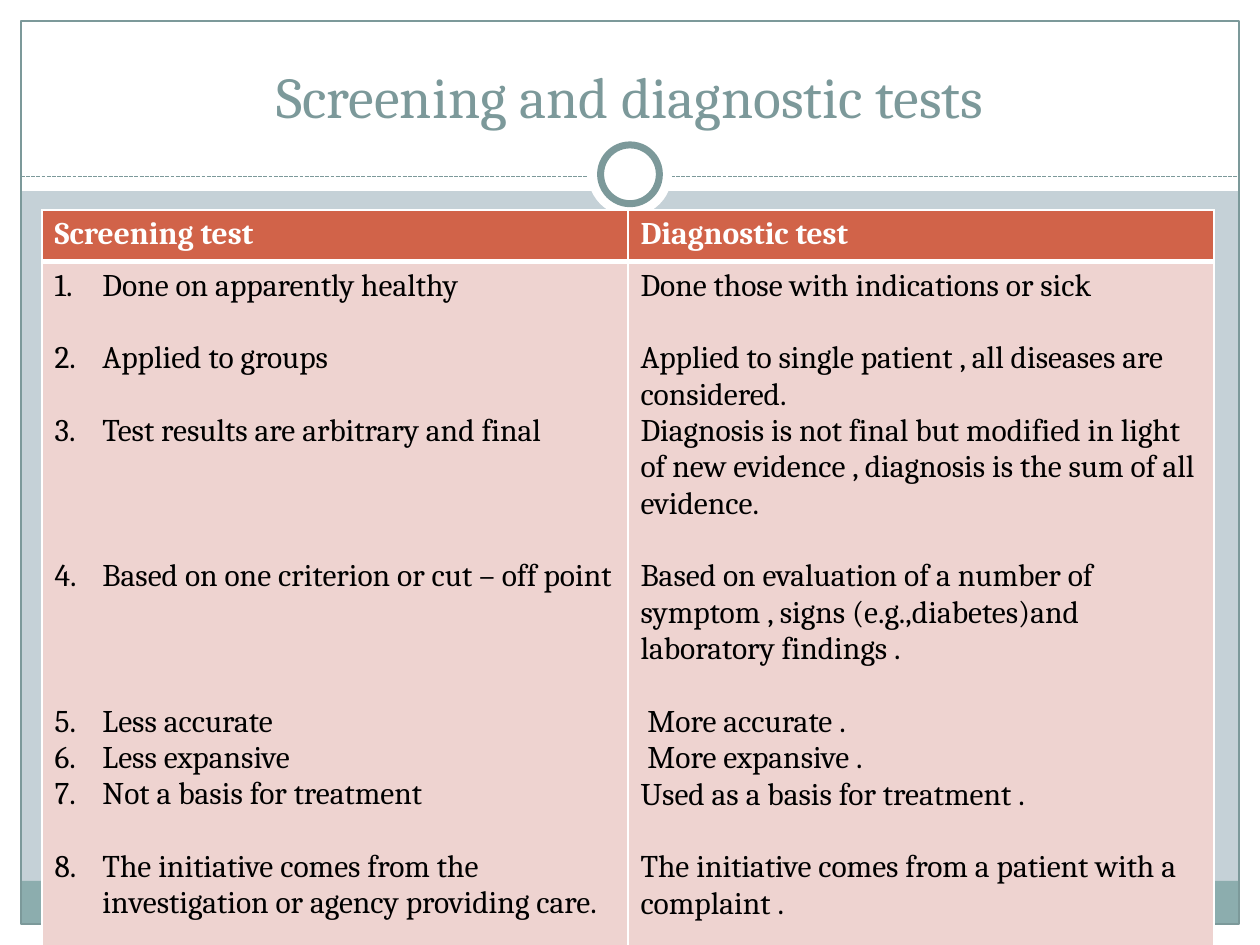
from dataclasses import dataclass
from typing import Optional

from lxml.etree import SubElement
from pptx import Presentation
from pptx.dml.color import RGBColor
from pptx.enum.dml import MSO_LINE
from pptx.enum.shapes import MSO_CONNECTOR, MSO_SHAPE
from pptx.enum.text import MSO_ANCHOR, MSO_AUTO_SIZE, PP_ALIGN
from pptx.oxml import parse_xml
from pptx.oxml.ns import nsdecls, qn
from pptx.util import Inches, Pt

WHITE = RGBColor(0xFF, 0xFF, 0xFF)
BLACK = RGBColor(0x00, 0x00, 0x00)
MIST = RGBColor(0xC5, 0xD1, 0xD7)
SAGE = RGBColor(0x8C, 0xAD, 0xAE)
SLATE = RGBColor(0x7C, 0x99, 0x9A)
RUST = RGBColor(0xD1, 0x63, 0x49)
BLUSH = RGBColor(0xEE, 0xD3, 0xD0)

FONT = "Cambria"
COLUMNS, ROWS = 60, 45
LINE_GAP = 20.75
HANG = Inches(0.38)


@dataclass
class Decor:
    column: float
    row: float
    columns: float
    rows: float
    fill: Optional[RGBColor] = None
    line_width: float = 0
    kind: MSO_SHAPE = MSO_SHAPE.RECTANGLE


@dataclass
class Entry:
    text: str
    lines_before: int = 0


@dataclass
class TestColumn:
    heading: str
    entries: list[Entry]
    numbered: bool = False


FRAME = [
    Decor(0, 44, COLUMNS, 1, WHITE),
    Decor(0, 0, COLUMNS, 9.1, WHITE),
    Decor(0, 0, 1, ROWS, WHITE),
    Decor(59, 0, 1, ROWS, WHITE),
    Decor(1, 41.95, 58, 2.05, SAGE),
    Decor(1, 1, 58, 43, line_width=0.75),
]
MEDALLION = [
    Decor(28, 6.3, 4, 4, WHITE, kind=MSO_SHAPE.OVAL),
    Decor(28.6, 6.9, 2.8, 2.8, WHITE, 4, MSO_SHAPE.OVAL),
]
TESTS = [
    TestColumn("Screening test", [
        Entry("Done on apparently healthy"),
        Entry("Applied to groups", 1),
        Entry("Test results are arbitrary and final", 1),
        Entry("Based on one criterion or cut – off point", 3),
        Entry("Less accurate", 3),
        Entry("Less expansive"),
        Entry("Not a basis for treatment"),
        Entry("The initiative comes from the investigation or agency providing care.", 1),
    ], numbered=True),
    TestColumn("Diagnostic test", [
        Entry("Done those with indications or sick"),
        Entry("Applied to single patient , all diseases are considered.", 1),
        Entry("Diagnosis is not final but modified in light of new evidence , "
              "diagnosis is the sum of all evidence."),
        Entry("Based on evaluation of a number of symptom , signs "
              "(e.g.,diabetes)and laboratory findings .", 1),
        Entry(" More accurate .", 1),
        Entry(" More expansive ."),
        Entry("Used as a basis for treatment ."),
        Entry("The initiative comes from a patient with a complaint .", 1),
    ]),
]


def grid(cells: float) -> int:
    return Inches(cells * 10 / COLUMNS)


def draw_decor(slide, decor: Decor) -> None:
    shape = slide.shapes.add_shape(
        decor.kind, grid(decor.column), grid(decor.row),
        grid(decor.columns), grid(decor.rows))
    shape.shadow.inherit = False
    if decor.fill is None:
        shape.fill.background()
    else:
        shape.fill.solid()
        shape.fill.fore_color.rgb = decor.fill
    if decor.line_width:
        shape.line.color.rgb = SLATE
        shape.line.width = Pt(decor.line_width)
    else:
        shape.line.fill.background()


def draw_divider(slide) -> None:
    divider = slide.shapes.add_connector(
        MSO_CONNECTOR.STRAIGHT, grid(1), grid(8.4), grid(59), grid(8.4))
    divider.line.color.rgb = SLATE
    divider.line.width = Pt(0.75)
    divider.line.dash_style = MSO_LINE.SQUARE_DOT
    SubElement(divider._element.spPr, qn("a:effectLst"))


def style_text(paragraph, size: float, color: RGBColor, bold: bool = False) -> None:
    paragraph.font.name = FONT
    paragraph.font.size = Pt(size)
    paragraph.font.bold = bold
    paragraph.font.color.rgb = color


def style_cell(cell, fill: RGBColor, top: float, bottom: float) -> None:
    cell.fill.solid()
    cell.fill.fore_color.rgb = fill
    properties = cell._tc.get_or_add_tcPr()
    for position, (side, width) in enumerate(
            [("L", 1), ("R", 1), ("T", top), ("B", bottom)]):
        properties.insert(position, parse_xml(
            f'<a:ln{side} {nsdecls("a")} w="{Pt(width)}"><a:solidFill>'
            f'<a:srgbClr val="{WHITE}"/></a:solidFill></a:ln{side}>'))


def number(paragraph) -> None:
    properties = paragraph._p.get_or_add_pPr()
    properties.set("marL", str(HANG))
    properties.set("indent", str(-HANG))
    SubElement(properties, qn("a:buFont"), typeface="+mj-lt")
    SubElement(properties, qn("a:buAutoNum"), type="arabicPeriod")


def fill_column(heading_cell, body_cell, test: TestColumn) -> None:
    style_cell(heading_cell, RUST, 1, 3)
    heading_cell.text = test.heading
    style_text(heading_cell.text_frame.paragraphs[0], 18, WHITE, bold=True)
    style_cell(body_cell, BLUSH, 3, 1)
    body = body_cell.text_frame
    for index, entry in enumerate(test.entries):
        paragraph = body.add_paragraph() if index else body.paragraphs[0]
        paragraph.text = entry.text
        if test.numbered:
            number(paragraph)
        if entry.lines_before:
            paragraph.space_before = Pt(entry.lines_before * LINE_GAP)
        style_text(paragraph, 18, BLACK)


def place_title(slide, text: str) -> None:
    title = slide.shapes.title
    slide.shapes._spTree.append(title._element)
    title.left, title.top = grid(2), grid(1.5)
    title.width, title.height = grid(56), grid(5)
    title.text = text
    title.text_frame.auto_size = MSO_AUTO_SIZE.NONE
    title.text_frame.vertical_anchor = MSO_ANCHOR.BOTTOM
    heading = title.text_frame.paragraphs[0]
    heading.alignment = PP_ALIGN.CENTER
    style_text(heading, 33, SLATE)


def draw_comparison(slide) -> None:
    comparison = slide.shapes.add_table(
        2, len(TESTS), grid(2), grid(10), grid(55.8), grid(37.25)).table
    comparison.horz_banding = False
    comparison.rows[0].height = grid(2.45)
    comparison.rows[1].height = grid(34.8)
    for index, test in enumerate(TESTS):
        fill_column(comparison.cell(0, index), comparison.cell(1, index), test)


def main() -> None:
    deck = Presentation()
    deck.slide_width, deck.slide_height = grid(COLUMNS), grid(ROWS)
    slide = deck.slides.add_slide(deck.slide_layouts[5])
    slide.background.fill.solid()
    slide.background.fill.fore_color.rgb = MIST
    for decor in FRAME:
        draw_decor(slide, decor)
    draw_divider(slide)
    for decor in MEDALLION:
        draw_decor(slide, decor)
    place_title(slide, "Screening and diagnostic tests")
    draw_comparison(slide)
    deck.save("out.pptx")


if __name__ == "__main__":
    main()
